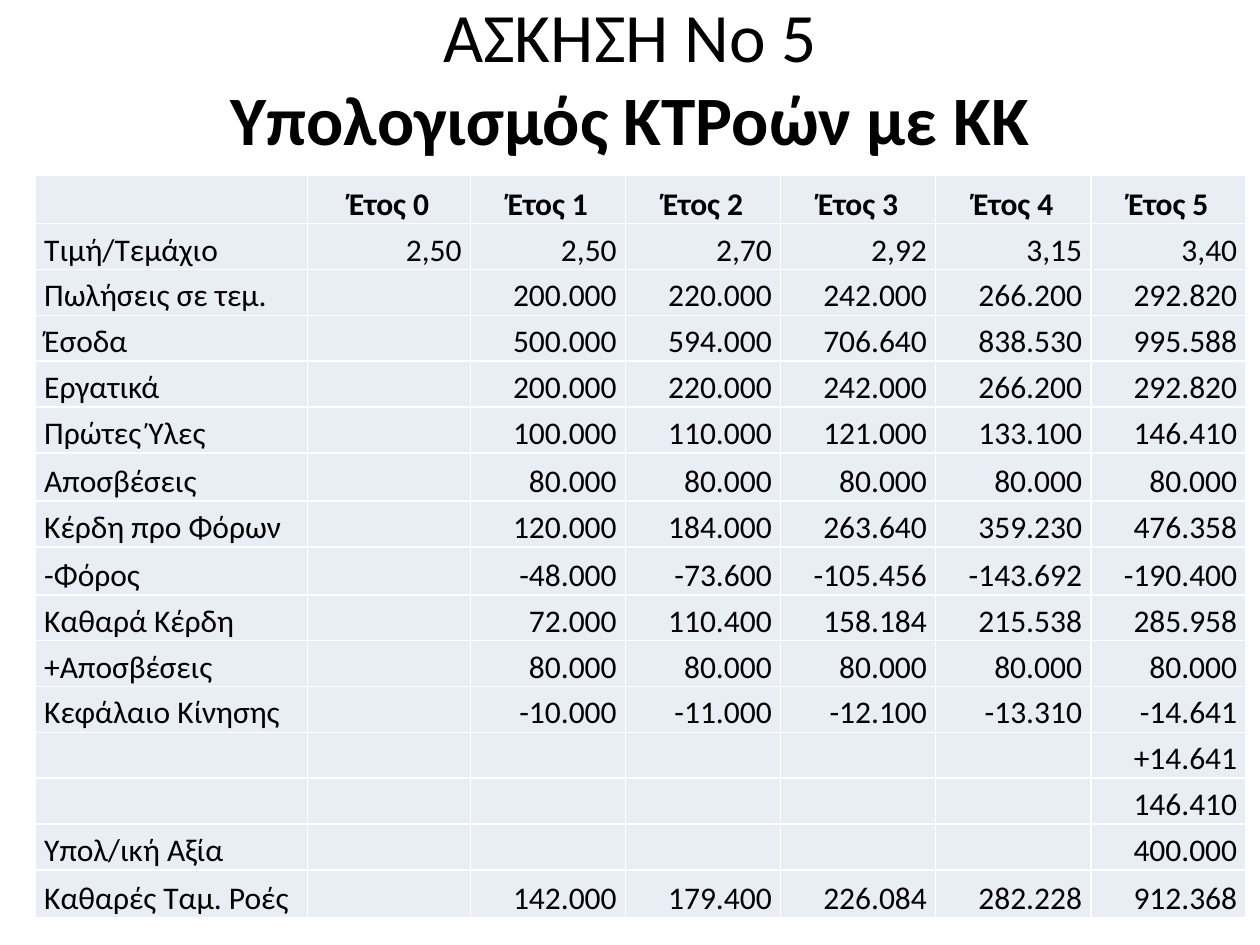
from lxml.etree import SubElement
from pptx import Presentation
from pptx.dml.color import RGBColor
from pptx.enum.text import MSO_ANCHOR as Anchor, MSO_AUTO_SIZE as AutoSize, PP_ALIGN as Align
from pptx.oxml.ns import qn
from pptx.util import Pt

COLORS = {"text": "000000", "cell": "E9EDF4", "border": "FFFFFF"}
FONT = "Calibri"

COLUMN_WIDTHS = [155.5, 93] + [88.65] * 5
ROW_HEIGHT, TALL_ROW_HEIGHT = 26.2, 27.5
TALL_ROWS = {0, 6, 8, 15}

HEADER = [f"Έτος {year}" for year in range(6)]
# Values fill the rightmost columns, ending at year 5
ROWS = [
    ("Τιμή/Τεμάχιο", ["2,50", "2,50", "2,70", "2,92", "3,15", "3,40"]),
    ("Πωλήσεις σε τεμ.", ["200.000", "220.000", "242.000", "266.200", "292.820"]),
    ("Έσοδα", ["500.000", "594.000", "706.640", "838.530", "995.588"]),
    ("Εργατικά", ["200.000", "220.000", "242.000", "266.200", "292.820"]),
    ("Πρώτες Ύλες", ["100.000", "110.000", "121.000", "133.100", "146.410"]),
    ("Αποσβέσεις", ["80.000"] * 5),
    ("Κέρδη προ Φόρων", ["120.000", "184.000", "263.640", "359.230", "476.358"]),
    ("-Φόρος", ["-48.000", "-73.600", "-105.456", "-143.692", "-190.400"]),
    ("Καθαρά Κέρδη", ["72.000", "110.400", "158.184", "215.538", "285.958"]),
    ("+Αποσβέσεις", ["80.000"] * 5),
    ("Κεφάλαιο Κίνησης", ["-10.000", "-11.000", "-12.100", "-13.310", "-14.641"]),
    ("", ["+14.641"]),
    ("", ["146.410"]),
    ("Υπολ/ική Αξία", ["400.000"]),
    ("Καθαρές Ταμ. Ροές", ["142.000", "179.400", "226.084", "282.228", "912.368"]),
]


def set_attributes(target, values):
    for name, value in values.items():
        setattr(target, name, value)


def add_run(paragraph, text, size, bold=False):
    run = paragraph.add_run()
    run.text = text
    set_attributes(run.font, {"name": FONT, "size": Pt(size), "bold": bold})
    run.font.color.rgb = RGBColor.from_string(COLORS["text"])


def format_title(title):
    set_attributes(title, {"left": Pt(54), "top": Pt(21), "width": Pt(612), "height": Pt(45)})
    set_attributes(title.text_frame, {"word_wrap": True, "auto_size": AutoSize.NONE,
                                      "vertical_anchor": Anchor.MIDDLE})
    paragraph = title.text_frame.paragraphs[0]
    paragraph.alignment = Align.CENTER
    add_run(paragraph, "ΑΣΚΗΣΗ Νο 5", 39.6)
    paragraph.add_line_break()
    add_run(paragraph, "Υπολογισμός ΚΤΡοών με ΚΚ", 39.6, bold=True)


def add_borders(cell):
    properties = cell._tc.get_or_add_tcPr()
    for side in ("lnL", "lnR", "lnT", "lnB"):
        line = SubElement(properties, qn(f"a:{side}"), w=str(Pt(1)))
        fill = SubElement(line, qn("a:solidFill"))
        SubElement(fill, qn("a:srgbClr"), val=COLORS["border"])


def fill_cell(cell, text, alignment, bold):
    set_attributes(cell, {"margin_left": Pt(5), "margin_right": Pt(5), "margin_top": 0,
                          "margin_bottom": 0, "vertical_anchor": Anchor.BOTTOM})
    add_borders(cell)
    cell.fill.solid()
    cell.fill.fore_color.rgb = RGBColor.from_string(COLORS["cell"])
    paragraph = cell.text_frame.paragraphs[0]
    paragraph.alignment = alignment
    if text:
        add_run(paragraph, text, 18, bold)


def add_cash_flow_table(slide):
    rows = [["", *HEADER]]
    for label, values in ROWS:
        rows.append([label] + [""] * (len(HEADER) - len(values)) + values)
    heights = [TALL_ROW_HEIGHT if index in TALL_ROWS else ROW_HEIGHT
               for index in range(len(rows))]

    frame = slide.shapes.add_table(len(rows), len(COLUMN_WIDTHS), Pt(20.3), Pt(100.3),
                                   Pt(sum(COLUMN_WIDTHS)), Pt(sum(heights)))
    table = frame.table
    set_attributes(table, {"first_row": False, "horz_banding": False})
    for column, width in zip(table.columns, COLUMN_WIDTHS):
        column.width = Pt(width)
    for row, height in zip(table.rows, heights):
        row.height = Pt(height)

    for row_index, texts in enumerate(rows):
        is_header = row_index == 0
        for column_index, text in enumerate(texts):
            value_alignment = Align.CENTER if is_header else Align.RIGHT
            alignment = value_alignment if column_index else Align.LEFT
            fill_cell(table.cell(row_index, column_index), text, alignment, is_header)


def main():
    presentation = Presentation()
    set_attributes(presentation, {"slide_width": Pt(720), "slide_height": Pt(540)})
    slide = presentation.slides.add_slide(presentation.slide_layouts[5])

    # Heading
    format_title(slide.shapes.title)
    # Cash flows by year
    add_cash_flow_table(slide)

    presentation.save("out.pptx")


if __name__ == "__main__":
    main()
